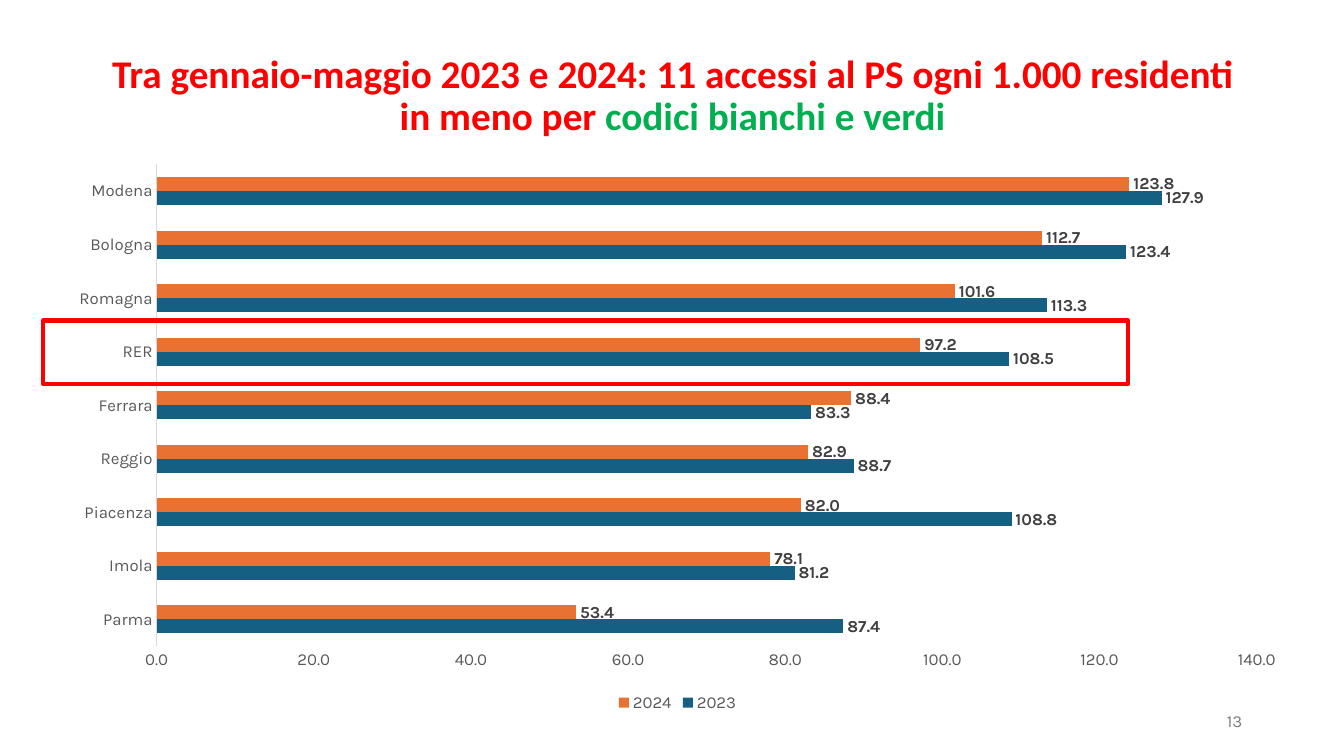
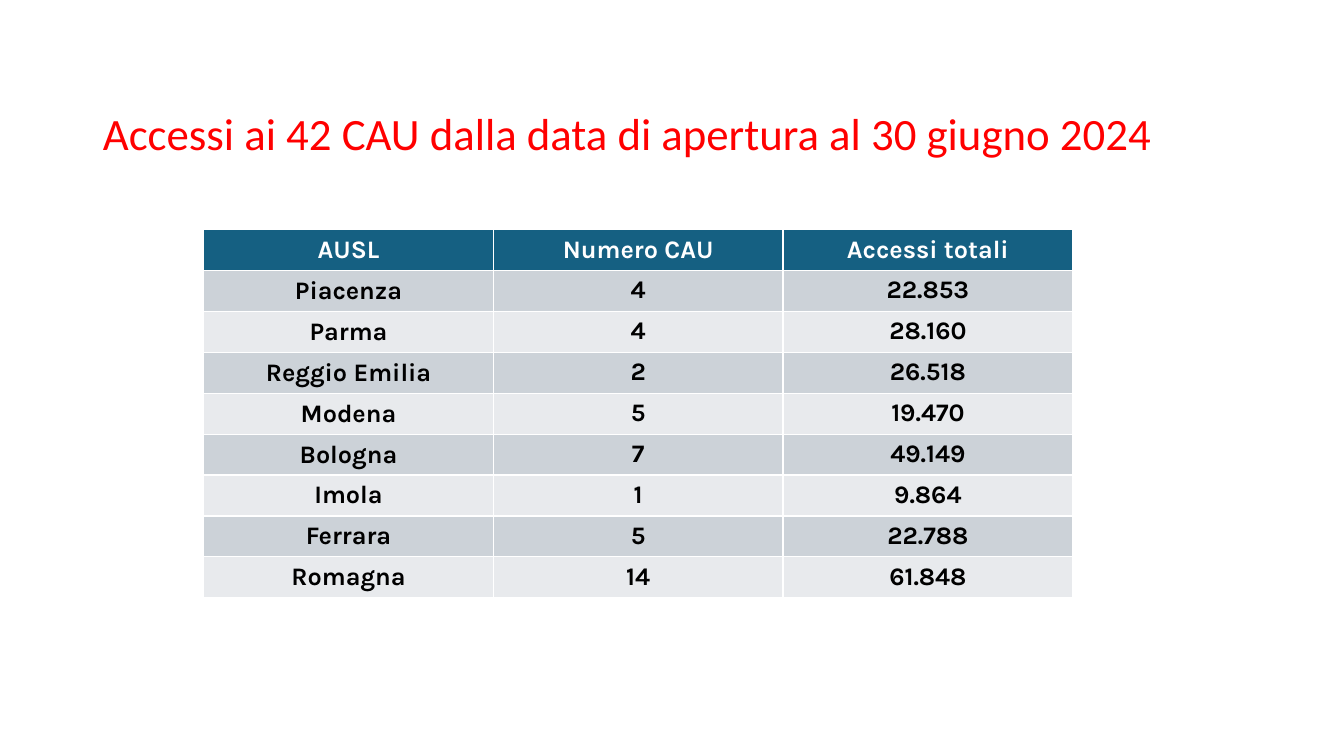
from pptx import Presentation
from pptx.chart.data import CategoryChartData
from pptx.dml.color import RGBColor
from pptx.enum.chart import XL_CHART_TYPE as ChartType, XL_LABEL_POSITION as LabelPos
from pptx.enum.chart import XL_LEGEND_POSITION as LegendPos, XL_TICK_MARK as Tick
from pptx.enum.shapes import MSO_SHAPE as Shape
from pptx.enum.text import MSO_ANCHOR as Anchor, MSO_AUTO_SIZE as AutoSize, PP_ALIGN as Align
from pptx.util import Pt

EMU_PER_PX = 9144
RED, GREEN, BLUE, ORANGE = "FF0000", "00B050", "156082", "E97132"
BLACK, WHITE = "000000", "FFFFFF"
AXIS_GREY, LABEL_GREY, RULE_GREY, NUMBER_GREY = "595959", "404040", "D9D9D9", "797979"
BANDS = ("CCD2D8", "E8EAED")


def px(*lengths):
    return [length * EMU_PER_PX for length in lengths]


def color(code):
    return RGBColor.from_string(code)


def apply(target, **values):
    for name, value in values.items():
        setattr(target, name, value)


class Deck:
    title_font = "Calibri"
    body_font = "Karla"

    def __init__(self, width, height):
        self.prs = Presentation()
        self.prs.slide_width, self.prs.slide_height = px(width, height)
        self.slide = None

    def style(self, font, size, ink, bold=False, name=None):
        apply(font, name=name or self.body_font, size=Pt(size), bold=bold)
        font.color.rgb = color(ink)

    def add_slide(self, box, runs, size, bold=False, align=Align.LEFT):
        self.slide = self.prs.slides.add_slide(self.prs.slide_layouts[5])
        title = self.slide.shapes.title
        apply(title, **dict(zip(("left", "top", "width", "height"), px(*box))))
        apply(title.text_frame, word_wrap=True, auto_size=AutoSize.NONE,
              vertical_anchor=Anchor.MIDDLE)
        paragraph = title.text_frame.paragraphs[0]
        apply(paragraph, alignment=align, line_spacing=0.9)
        for words, ink in runs:
            run = paragraph.add_run()
            run.text = words
            self.style(run.font, size, ink, bold, self.title_font)

    def page_number(self, box, number):
        frame = self.slide.shapes.add_textbox(*px(*box)).text_frame
        apply(frame, word_wrap=True, vertical_anchor=Anchor.MIDDLE)
        paragraph = frame.paragraphs[0]
        paragraph.alignment = Align.RIGHT
        run = paragraph.add_run()
        run.text = number
        self.style(run.font, 12, NUMBER_GREY)

    def outline(self, box, ink, weight):
        frame = self.slide.shapes.add_shape(Shape.RECTANGLE, *px(*box))
        frame.shadow.inherit = False
        frame.fill.background()
        frame.line.color.rgb = color(ink)
        frame.line.width = Pt(weight)

    def bar_chart(self, box, categories, series, top, step):
        data = CategoryChartData(number_format="0.0")
        data.categories = categories
        for name, values, _ in series:
            data.add_series(name, values)
        chart = self.slide.shapes.add_chart(
            ChartType.BAR_CLUSTERED, *px(*box), data).chart
        self.style(chart.font, 10, BLACK)
        apply(chart, has_title=False, has_legend=True)
        apply(chart.legend, position=LegendPos.BOTTOM, include_in_layout=False)
        self.style(chart.legend.font, 12, AXIS_GREY)

        for axis in (chart.category_axis, chart.value_axis):
            apply(axis, major_tick_mark=Tick.NONE, minor_tick_mark=Tick.NONE,
                  has_major_gridlines=False)
            self.style(axis.tick_labels.font, 12, AXIS_GREY)
        rule = chart.category_axis.format.line
        rule.color.rgb = color(RULE_GREY)
        rule.width = Pt(0.75)
        scale = chart.value_axis
        apply(scale, minimum_scale=0, maximum_scale=top, major_unit=step)
        apply(scale.tick_labels, number_format="0.0", number_format_is_linked=False)
        scale.format.line.fill.background()

        plot = chart.plots[0]
        apply(plot, gap_width=182, overlap=0, vary_by_categories=False)
        for bars, (_, _, ink) in zip(plot.series, series):
            bars.invert_if_negative = False
            bars.format.fill.solid()
            bars.format.fill.fore_color.rgb = color(ink)
            labels = bars.data_labels
            apply(labels, show_value=True, position=LabelPos.OUTSIDE_END,
                  number_format="0.0", number_format_is_linked=False)
            self.style(labels.font, 12, LABEL_GREY, True)

    def table(self, box, header, rows):
        lines = [header, *rows]
        grid = self.slide.shapes.add_table(len(lines), len(header), *px(*box)).table
        for r, line in enumerate(lines):
            fill, ink = (BANDS[(r - 1) % 2], BLACK) if r else (BLUE, WHITE)
            for c, words in enumerate(line):
                cell = grid.cell(r, c)
                cell.fill.solid()
                cell.fill.fore_color.rgb = color(fill)
                cell.vertical_anchor = Anchor.MIDDLE if r and c == 0 else Anchor.TOP
                paragraph = cell.text_frame.paragraphs[0]
                paragraph.alignment = Align.CENTER
                run = paragraph.add_run()
                run.text = words
                self.style(run.font, 18, ink, True)


def main():
    deck = Deck(1333, 750)

    deck.add_slide(
        (92, 40, 1150, 112),
        [("Tra gennaio-maggio 2023 e 2024: 11 accessi al PS ogni 1.000 residenti in meno per ", RED),
         ("codici bianchi e verdi", GREEN)],
        28, True, Align.CENTER)
    districts = ["Parma", "Imola", "Piacenza", "Reggio", "Ferrara",
                 "RER", "Romagna", "Bologna", "Modena"]
    visits = [
        ("2023", (87.4, 81.2, 108.8, 88.7, 83.3, 108.5, 113.3, 123.4, 127.9), BLUE),
        ("2024", (53.4, 78.1, 82, 82.9, 88.4, 97.2, 101.6, 112.7, 123.8), ORANGE),
    ]
    deck.bar_chart((54, 152, 1236, 559), districts, visits, 140, 20)
    deck.page_number((942, 695, 300, 40), "13")
    deck.outline((43, 318, 1076, 63), RED, 3)

    deck.add_slide(
        (92, 103, 1150, 64),
        [("Accessi ai 42 CAU dalla data di apertura al 30 giugno 2024", RED)], 32)
    deck.table(
        (202, 228, 862, 365),
        ("AUSL", "Numero CAU", "Accessi totali"),
        [("Piacenza", "4", "22.853"),
         ("Parma", "4", "28.160"),
         ("Reggio Emilia", "2", "26.518"),
         ("Modena", "5", "19.470"),
         ("Bologna", "7", "49.149"),
         ("Imola", "1", "9.864"),
         ("Ferrara", "5", "22.788"),
         ("Romagna", "14", "61.848")])

    deck.prs.save("out.pptx")


if __name__ == "__main__":
    main()
